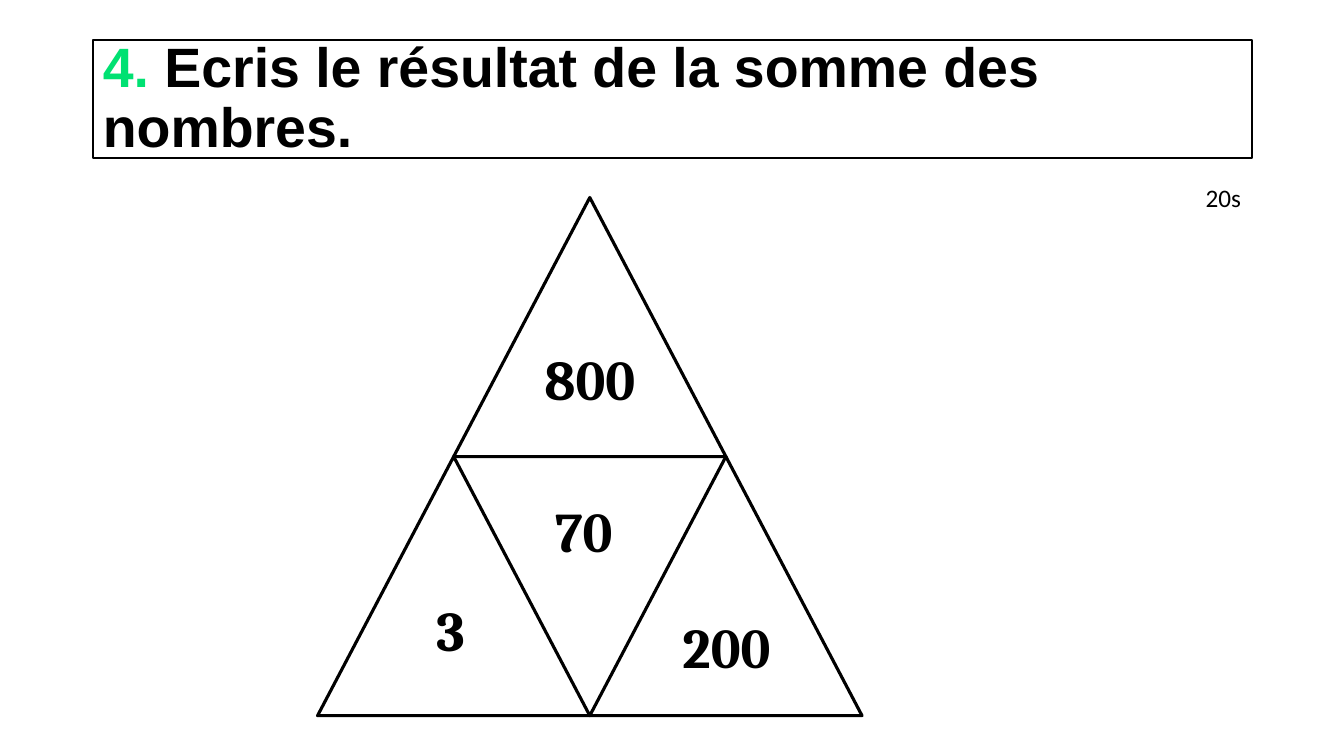
from typing import NamedTuple

from pptx import Presentation
from pptx.dml.color import RGBColor
from pptx.enum.shapes import MSO_SHAPE
from pptx.enum.text import MSO_ANCHOR, MSO_AUTO_SIZE, PP_ALIGN
from pptx.util import Inches, Pt

TRIANGLE = MSO_SHAPE.ISOSCELES_TRIANGLE
LEFT, CENTER = PP_ALIGN.LEFT, PP_ALIGN.CENTER
MIDDLE = MSO_ANCHOR.MIDDLE
NO_AUTOFIT, GROW = MSO_AUTO_SIZE.NONE, MSO_AUTO_SIZE.SHAPE_TO_FIT_TEXT

COLORS = {"ink": "000000", "number": "00E172", "background": "FFFFFF"}
SIDE, HEIGHT = 2.7, 2.57
APEX_LEFT, APEX_TOP = 4.5, 1.96


class Label(NamedTuple):
    text: str
    left: float
    top: float
    width: float
    height: float


ADDENDS = [
    Label("70", 5.28, 4.88, 1.02, 0.77),
    Label("200", 6.58, 6.03, 1.25, 0.77),
    Label("800", 5.23, 3.37, 1.24, 0.77),
    Label("3", 3.96, 5.86, 1.02, 0.88),
]
TIME_LIMIT = Label("20s", 11.86, 1.76, 0.56, 0.4)


def rgb(name: str) -> RGBColor:
    return RGBColor.from_string(COLORS[name])


def add_run(paragraph, text: str, *, font: str, size: float,
            bold: bool = False, color: str = "ink") -> None:
    run = paragraph.add_run()
    run.text = text
    run.font.name = font
    run.font.size = Pt(size)
    run.font.bold = bold
    run.font.color.rgb = rgb(color)


def add_label(shapes, label: Label, *, align=LEFT, wrap: bool = True, **text_format) -> None:
    box = shapes.add_textbox(Inches(label.left), Inches(label.top),
                             Inches(label.width), Inches(label.height))
    frame = box.text_frame
    frame.word_wrap = wrap
    frame.auto_size = GROW
    paragraph = frame.paragraphs[0]
    paragraph.alignment = align
    add_run(paragraph, label.text, **text_format)


def add_triangle(shapes, left: float, top: float) -> None:
    triangle = shapes.add_shape(TRIANGLE, Inches(left), Inches(top),
                                Inches(SIDE), Inches(HEIGHT))
    triangle.shadow.inherit = False
    triangle.fill.background()
    triangle.line.color.rgb = rgb("ink")
    triangle.line.width = Pt(2.25)


def fill_title(title) -> None:
    title.left, title.top = Inches(0.92), Inches(0.4)
    title.width, title.height = Inches(11.5), Inches(1.17)
    title.line.color.rgb = rgb("ink")
    title.line.width = Pt(1.5)
    frame = title.text_frame
    frame.word_wrap = True
    frame.auto_size = NO_AUTOFIT
    frame.vertical_anchor = MIDDLE
    paragraph = frame.paragraphs[0]
    paragraph.alignment = LEFT
    paragraph.line_spacing = 0.9
    instruction = {"4.": "number", " Ecris le résultat de la somme des nombres.": "ink"}
    for text, color in instruction.items():
        add_run(paragraph, text, font="Arial", size=39.6, bold=True, color=color)


def add_number_triangle(slide) -> None:
    """Stack one triangle on two, leaving an inverted one between them."""
    pyramid = slide.shapes.add_group_shape().shapes
    for row in range(2):
        for column in range(row + 1):
            add_triangle(pyramid, APEX_LEFT + (column - row / 2) * SIDE,
                         APEX_TOP + row * HEIGHT)
    for addend in ADDENDS:
        add_label(pyramid, addend, align=CENTER, font="Cambria", size=40, bold=True)


def main() -> None:
    presentation = Presentation()
    presentation.slide_width = Inches(13.33)
    presentation.slide_height = Inches(7.5)
    slide = presentation.slides.add_slide(presentation.slide_layouts[5])
    slide.background.fill.solid()
    slide.background.fill.fore_color.rgb = rgb("background")
    fill_title(slide.shapes.title)
    add_number_triangle(slide)
    add_label(slide.shapes, TIME_LIMIT, wrap=False, font="Calibri", size=18)
    presentation.save("out.pptx")


if __name__ == "__main__":
    main()
